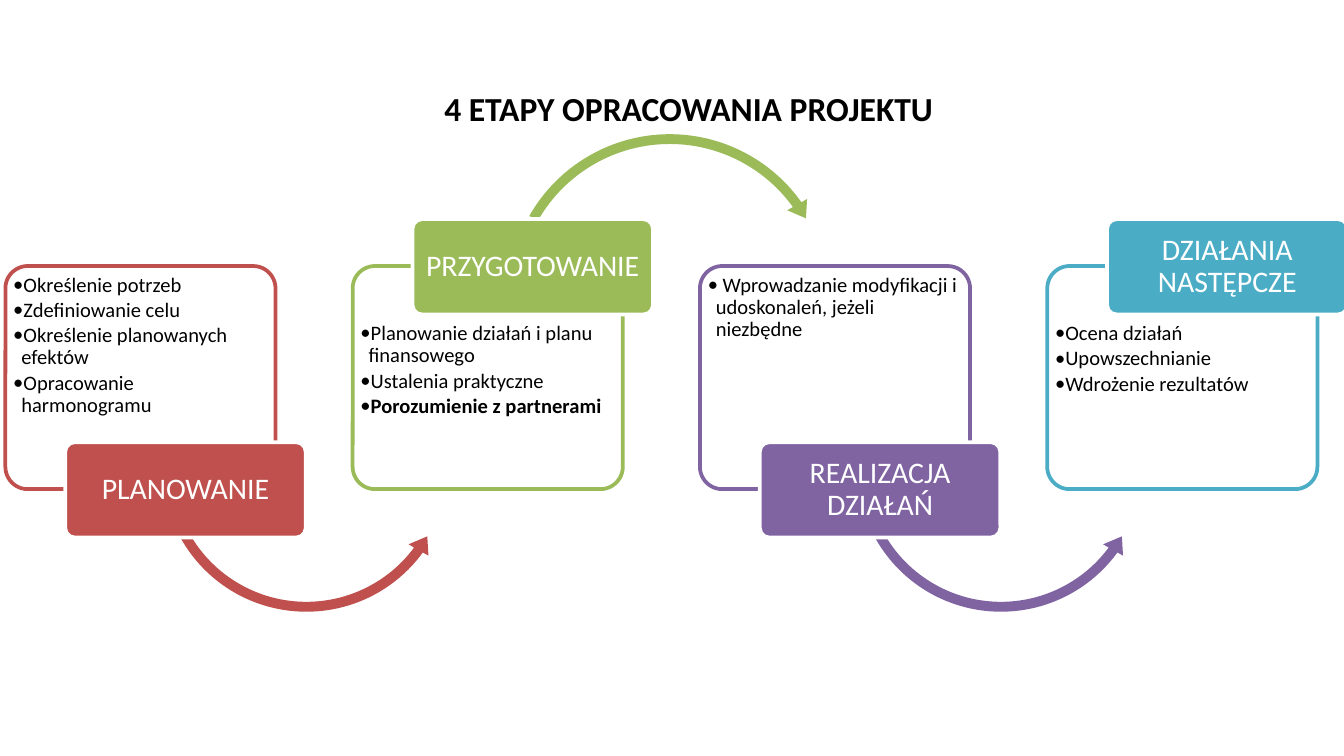
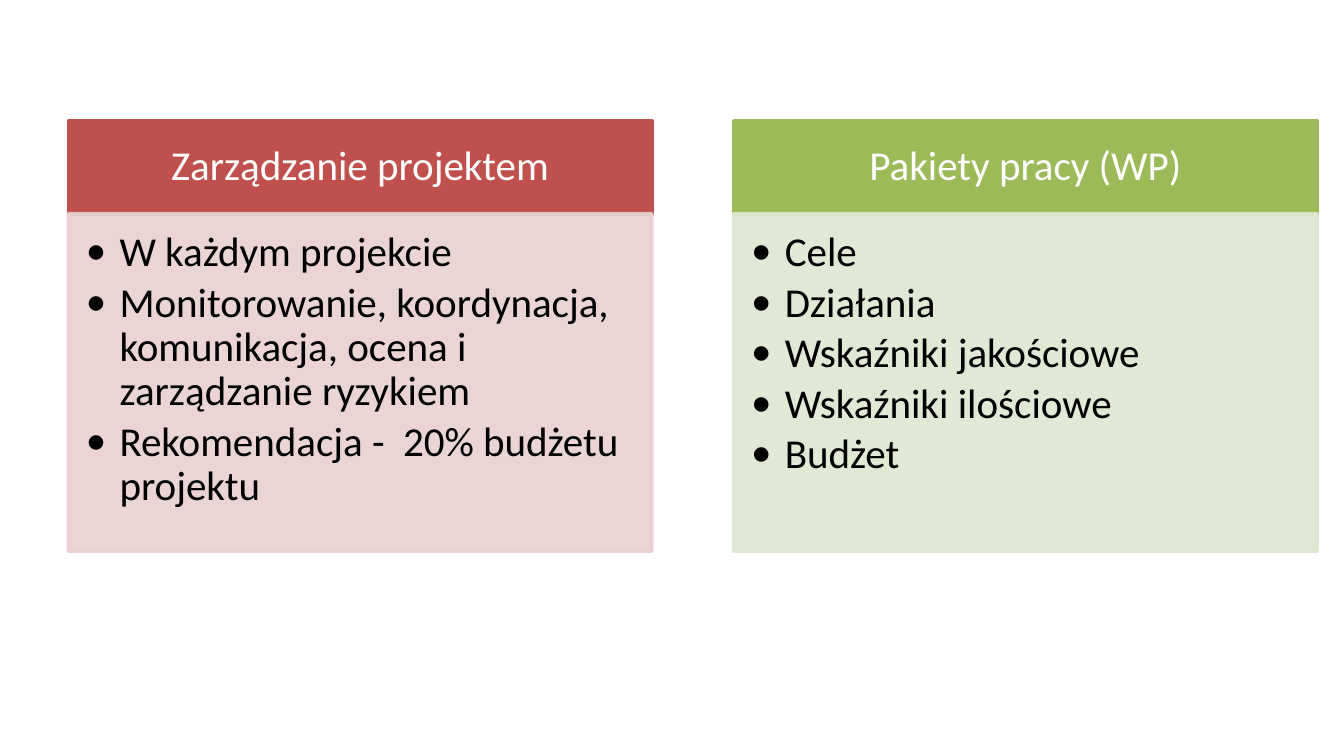
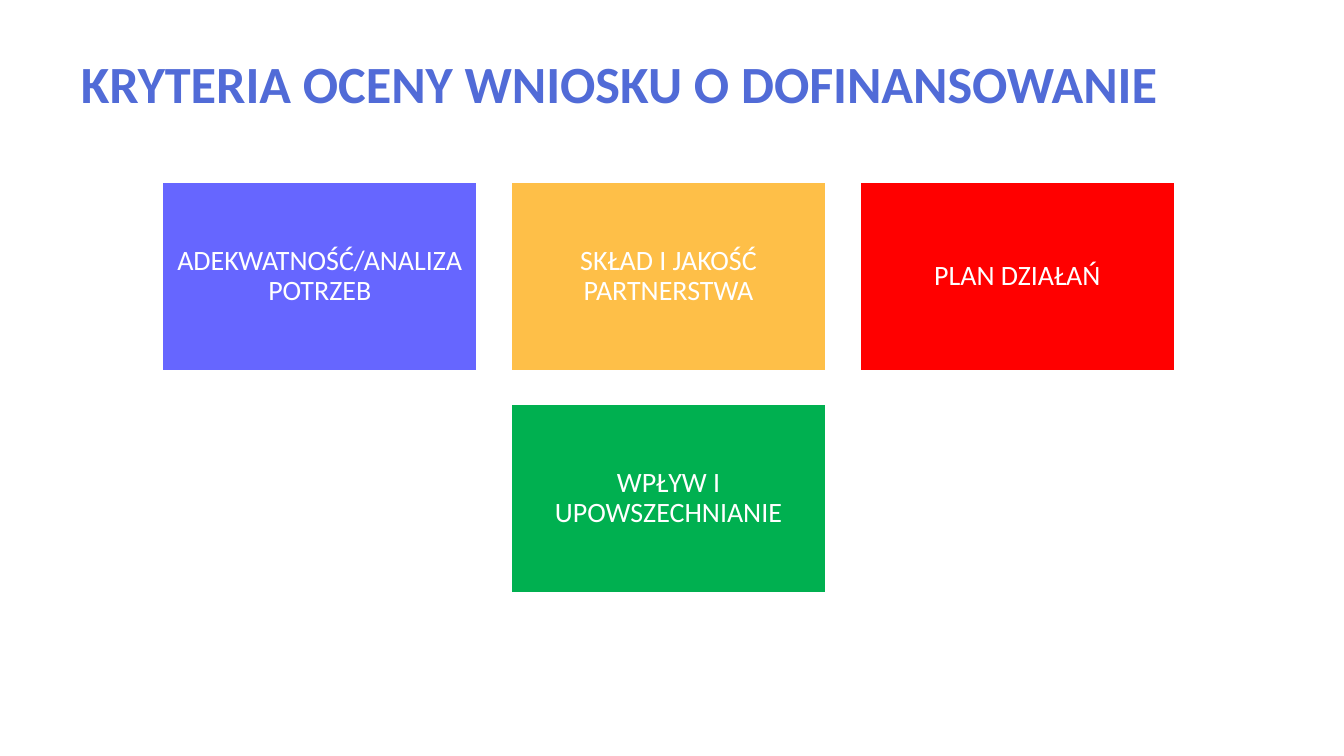
from dataclasses import dataclass

from lxml import etree
from pptx import Presentation
from pptx.dml.color import RGBColor
from pptx.enum.shapes import MSO_SHAPE
from pptx.enum.text import MSO_ANCHOR, MSO_AUTO_SIZE, PP_ALIGN
from pptx.oxml.ns import qn
from pptx.util import Inches, Pt

RECT = MSO_SHAPE.RECTANGLE
ROUNDED = MSO_SHAPE.ROUNDED_RECTANGLE
ARC_OVER = MSO_SHAPE.CIRCULAR_ARROW
ARC_UNDER = MSO_SHAPE.LEFT_CIRCULAR_ARROW
TOP, MIDDLE = MSO_ANCHOR.TOP, MSO_ANCHOR.MIDDLE
LEFT, CENTER = PP_ALIGN.LEFT, PP_ALIGN.CENTER
FIT_TEXT = MSO_AUTO_SIZE.SHAPE_TO_FIT_TEXT


@dataclass(frozen=True)
class Theme:
    font: str = "Calibri"
    white: str = "FFFFFF"
    black: str = "000000"
    red: str = "C0504D"
    green: str = "9BBB59"
    purple: str = "8064A2"
    teal: str = "4BACC6"
    pale_red: str = "E8D0D0"
    pale_green: str = "DEE7D1"
    title_blue: str = "516BD7"
    violet: str = "6666FF"
    amber: str = "FEBF48"
    bright_red: str = "FF0000"
    bright_green: str = "00B050"
    small: float = 11
    tile: float = 15
    label: float = 16
    subtitle: float = 18
    large: float = 22
    title: float = 28
    line: float = 2
    line_spacing: float = 0.9
    item_gap: float = 0.15
    panel_opacity: int = 90


@dataclass(frozen=True)
class Stage:
    name: str
    color: str
    items: tuple
    bold: str = ""


class Deck:
    COLUMNS = 100
    ROWS = 100

    def __init__(self, theme):
        self.theme = theme
        self.prs = Presentation()
        self.prs.slide_width = Inches(10)
        self.prs.slide_height = Inches(10) * 9 // 16
        self.s = None

    def slide(self):
        self.s = self.prs.slides.add_slide(self.prs.slide_layouts[6])

    def cols(self, n):
        return round(self.prs.slide_width * n / self.COLUMNS)

    def rows(self, n):
        return round(self.prs.slide_height * n / self.ROWS)

    def box(self, x, y, w, h):
        return self.cols(x), self.rows(y), self.cols(w), self.rows(h)

    def shape(self, kind, at, fill, line=None, adj=(), opacity=100):
        sp = self.s.shapes.add_shape(kind, *self.box(*at))
        sp.shadow.inherit = False
        for i, percent in enumerate(adj):
            sp.adjustments[i] = percent / 100
        sp.fill.solid()
        sp.fill.fore_color.rgb = RGBColor.from_string(fill)
        if line:
            sp.line.color.rgb = RGBColor.from_string(line)
            sp.line.width = Pt(self.theme.line)
        else:
            sp.line.fill.background()
        if opacity < 100:
            for color in sp._element.spPr.iter(qn("a:srgbClr")):
                if line == fill or color.getparent().getparent() is sp._element.spPr:
                    etree.SubElement(color, qn("a:alpha"), val=str(opacity * 1000))
        return sp

    def frame(self, sp, anchor, insets):
        tf = sp.text_frame
        tf.word_wrap = True
        tf.vertical_anchor = anchor
        tf.margin_left, tf.margin_top, tf.margin_right, tf.margin_bottom = map(self.cols, insets)
        return tf

    def run(self, p, text, size, color, bold=False):
        r = p.add_run()
        r.text = text
        r.font.name = self.theme.font
        r.font.size = Pt(size)
        r.font.bold = bold
        r.font.color.rgb = RGBColor.from_string(color)

    def title(self, text, at, size, color):
        sp = self.s.shapes.add_textbox(*self.box(*at))
        tf = sp.text_frame
        tf.word_wrap = True
        tf.auto_size = FIT_TEXT
        p = tf.paragraphs[0]
        p.alignment = CENTER
        self.run(p, text, size, color, True)

    def label(self, sp, text, size, insets):
        p = self.frame(sp, MIDDLE, insets).paragraphs[0]
        p.alignment = CENTER
        p.line_spacing = self.theme.line_spacing
        self.run(p, text, size, self.theme.white)

    def bullets(self, sp, items, size, indent, insets, bold=""):
        tf = self.frame(sp, TOP, insets)
        for i, item in enumerate(items):
            p = tf.paragraphs[0] if i == 0 else tf.add_paragraph()
            p.level = 1
            p.alignment = LEFT
            pPr = p._p.get_or_add_pPr()
            pPr.set("marL", str(self.cols(indent)))
            pPr.set("indent", str(-self.cols(indent)))
            etree.SubElement(pPr, qn("a:buFont"), typeface=self.theme.font)
            etree.SubElement(pPr, qn("a:buChar"), char="•")
            p.line_spacing = self.theme.line_spacing
            p.space_after = Pt(size * self.theme.item_gap)
            self.run(p, item, size, self.theme.black, item == bold)

    def stage(self, x, stage, raised, arrow):
        t = self.theme
        card = self.shape(ROUNDED, (x, 35.2, 20.1, 29.51), t.white, stage.color,
                          (10,), t.panel_opacity)
        self.bullets(card, stage.items, t.small, 0.6,
                     (0.1, 3.75 if raised else 0.15, 0, 0), stage.bold)
        if arrow and raised:
            self.shape(ARC_OVER, (x + 11.1, 16.89, 25, 44.44), stage.color,
                       adj=(2.9, 356.8, 19467.7, 12575.5, 3.4))
        elif arrow:
            self.shape(ARC_UNDER, (x + 11.2, 41.96, 22.4, 39.82), stage.color,
                       adj=(3.3, 400.9, 2176.4, 9024.5, 3.8))
        tab = self.shape(ROUNDED, (x + 4.45, 28.98 if raised else 58.49, 17.9, 12.62),
                         stage.color, t.white, (10,))
        self.label(tab, stage.name, t.label, (0.3, 0.2, 0.3, 0.2))

    def panel(self, x, heading, items, color, pale):
        t = self.theme
        head = self.shape(RECT, (x, 16, 43.4, 12.27), color, color)
        self.label(head, heading, t.large, (1.7, 1, 1.7, 1))
        body = self.shape(RECT, (x, 28.27, 43.4, 44.62), pale, pale,
                          opacity=t.panel_opacity)
        self.bullets(body, items, t.large, 2.5, (1.3, 1.3, 1.7, 1.9))

    def tile(self, col, row, text, color):
        sp = self.shape(RECT, (12 + 25.95 * col, 24 + 29.33 * row, 23.6, 25.24),
                        color, self.theme.white)
        self.label(sp, text, self.theme.tile, (0.6,) * 4)


def stages_slide(deck):
    t = deck.theme
    deck.slide()
    deck.title("4 ETAPY OPRACOWANIA PROJEKTU", (15.4, 10.8, 71.7, 7.11), t.subtitle, t.black)
    stages = (
        Stage("PLANOWANIE", t.red,
              ("Określenie potrzeb", "Zdefiniowanie celu",
               "Określenie planowanych efektów", "Opracowanie harmonogramu")),
        Stage("PRZYGOTOWANIE", t.green,
              ("Planowanie działań i planu finansowego", "Ustalenia praktyczne",
               "Porozumienie z partnerami"), "Porozumienie z partnerami"),
        Stage("REALIZACJA DZIAŁAŃ", t.purple,
              (" Wprowadzanie modyfikacji i udoskonaleń, jeżeli niezbędne",)),
        Stage("DZIAŁANIA NASTĘPCZE", t.teal,
              ("Ocena działań", "Upowszechnianie", "Wdrożenie rezultatów")),
    )
    for i, stage in enumerate(stages):
        deck.stage(0.4 + 25.84 * i, stage, i % 2 == 1, i < len(stages) - 1)


def management_slide(deck):
    t = deck.theme
    deck.slide()
    panels = (
        ("Zarządzanie projektem",
         ("W każdym projekcie",
          "Monitorowanie, koordynacja, komunikacja, ocena i zarządzanie ryzykiem",
          "Rekomendacja -  20% budżetu projektu"), t.red, t.pale_red),
        ("Pakiety pracy (WP)",
         ("Cele", "Działania", "Wskaźniki jakościowe", "Wskaźniki ilościowe", "Budżet"),
         t.green, t.pale_green),
    )
    for i, panel in enumerate(panels):
        deck.panel(5.1 + 49.5 * i, *panel)


def criteria_slide(deck):
    t = deck.theme
    deck.slide()
    deck.title("KRYTERIA OCENY WNIOSKU O DOFINANSOWANIE", (4.3, 5.87, 83.5, 10.13),
               t.title, t.title_blue)
    for tile in (
        (0, 0, "ADEKWATNOŚĆ/ANALIZA POTRZEB", t.violet),
        (1, 0, "SKŁAD I JAKOŚĆ PARTNERSTWA", t.amber),
        (2, 0, "PLAN DZIAŁAŃ", t.bright_red),
        (1, 1, "WPŁYW I UPOWSZECHNIANIE", t.bright_green),
    ):
        deck.tile(*tile)


def main():
    deck = Deck(Theme())
    stages_slide(deck)
    management_slide(deck)
    criteria_slide(deck)
    deck.prs.save("out.pptx")


if __name__ == "__main__":
    main()
